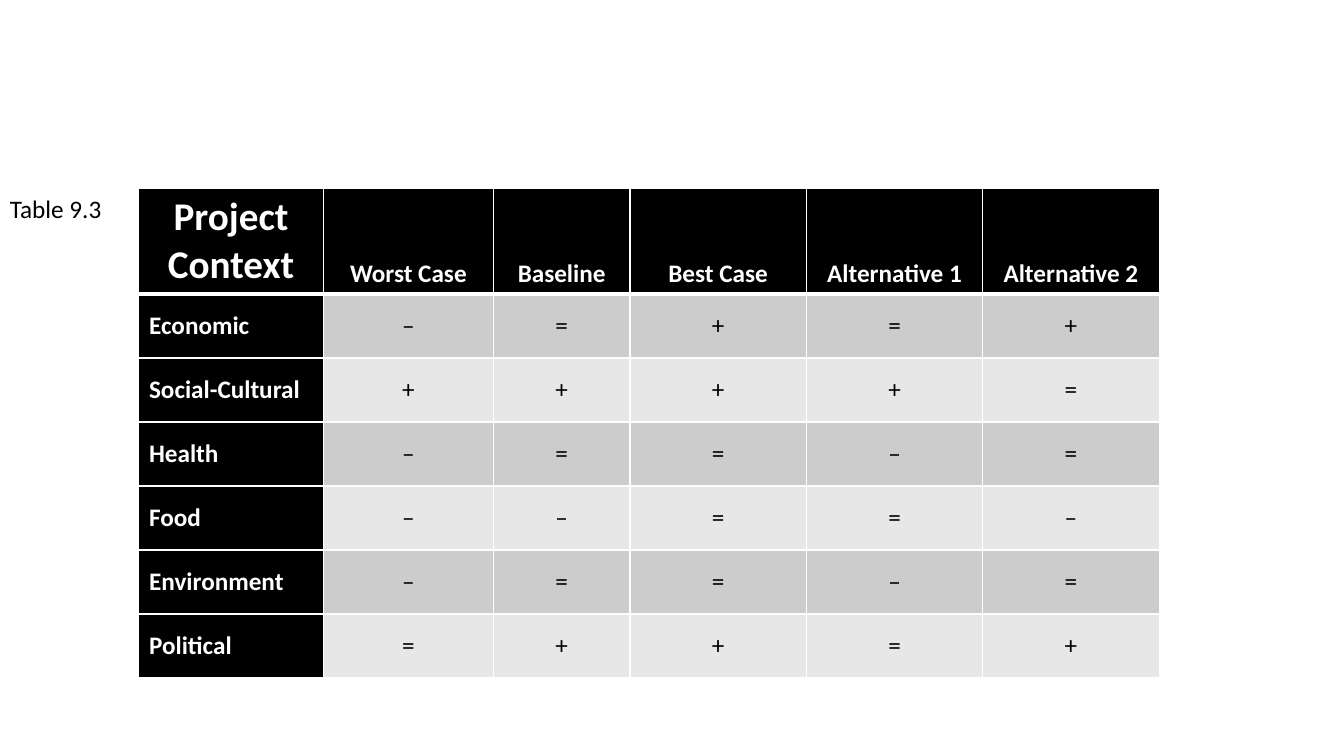
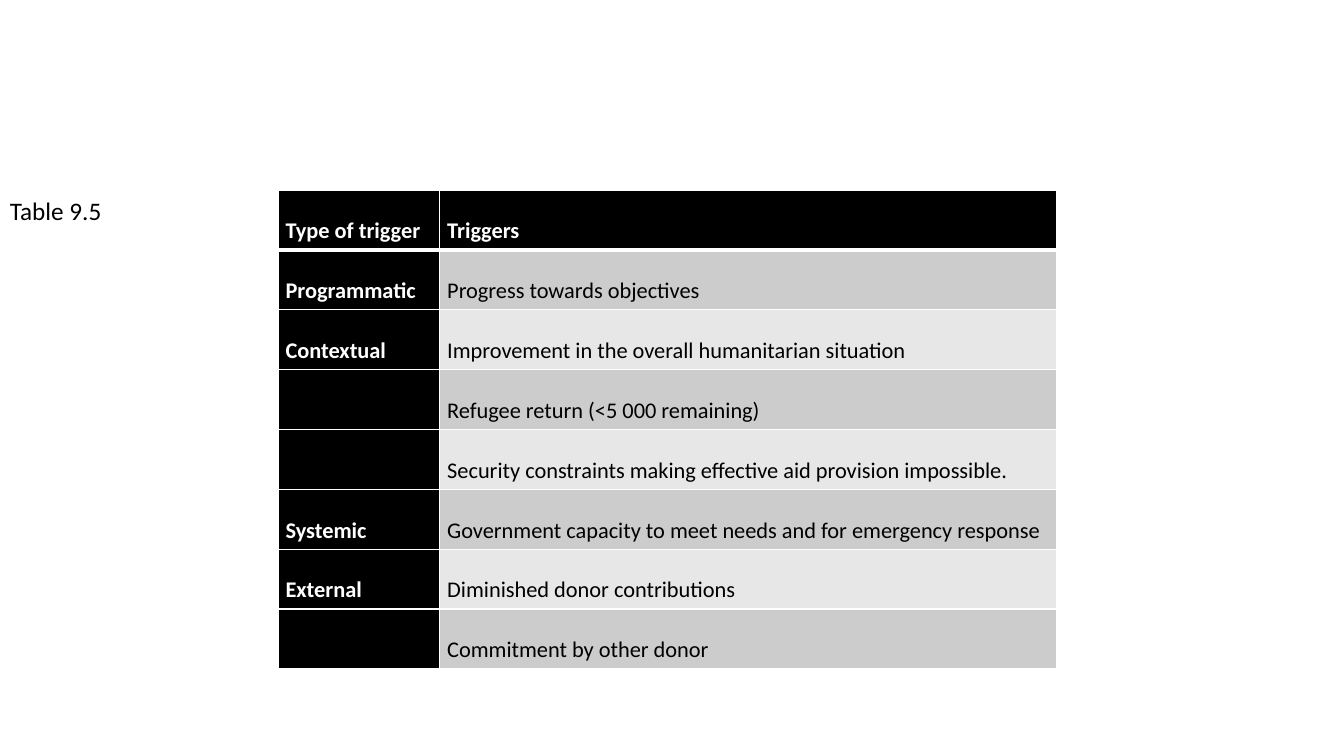
"""Build two slides, each with a caption and a banded table."""
from dataclasses import dataclass
from typing import Optional

from lxml import etree
from pptx import Presentation
from pptx import util as u
from pptx.dml.color import RGBColor
from pptx.enum import text
from pptx.oxml import ns

FONT = "Calibri"
COLORS = {"head": "000000", "odd": "CCCCCC", "even": "E7E7E7",
          "light": "FFFFFF", "dark": "000000"}
TOP, MIDDLE, BOTTOM = (text.MSO_ANCHOR.TOP, text.MSO_ANCHOR.MIDDLE,
                       text.MSO_ANCHOR.BOTTOM)
LEFT, CENTER, JUSTIFY = (text.PP_ALIGN.LEFT, text.PP_ALIGN.CENTER,
                         text.PP_ALIGN.JUSTIFY)


@dataclass(frozen=True)
class Style:
    """Text layout of a table cell."""
    size: int = 18
    align: text.PP_ALIGN = CENTER
    anchor: text.MSO_ANCHOR = MIDDLE
    spacing: Optional[float] = None
    margins: tuple[int, int] = (10, 5)


@dataclass(frozen=True)
class TableSlide:
    """Caption, table geometry, cell styles and rows of one slide."""
    caption: str
    left: int
    top: int
    widths: list[int]
    head_height: int
    row_height: int
    corner: Style
    head: Style
    label: Style
    value: Style
    rows: list[list[str]]

    def style(self, row: int, col: int) -> Style:
        """Return the style of the cell at a row and column."""
        if row == 0:
            return self.head if col else self.corner
        return self.value if col else self.label


TRIGGER = Style(16, JUSTIFY, TOP, 2.0, (7, 0))
SLIDES = [
    TableSlide(
        "Table 9.3", 132, 179, [176, 162, 130, 168, 168, 168], 101, 61,
        Style(28, anchor=TOP), Style(anchor=BOTTOM), Style(align=LEFT), Style(),
        [["Project Context", "Worst Case", "Baseline", "Best Case",
          "Alternative 1", "Alternative 2"],
         ["Economic", "–", "=", "+", "=", "+"],
         ["Social-Cultural", "+", "+", "+", "+", "="],
         ["Health", "–", "=", "=", "–", "="],
         ["Food", "–", "–", "=", "=", "–"],
         ["Environment", "–", "=", "=", "–", "="],
         ["Political", "=", "+", "+", "=", "+"]]),
    TableSlide(
        "Table 9.5", 265, 181, [154, 587], 57, 57,
        TRIGGER, TRIGGER, TRIGGER, TRIGGER,
        [["Type of trigger", "Triggers"],
         ["Programmatic", "Progress towards objectives"],
         ["Contextual", "Improvement in the overall humanitarian situation"],
         ["", "Refugee return (<5 000 remaining)"],
         ["", "Security constraints making effective aid provision impossible."],
         ["Systemic",
          "Government capacity to meet needs and for emergency response"],
         ["External", "Diminished donor contributions"],
         ["", "Commitment by other donor"]]),
]


def px(n: int) -> u.Emu:
    """Convert pixels, 96 to the inch, to EMU."""
    return u.Emu(n * 9525)


def rgb(name: str) -> RGBColor:
    """Return a named colour."""
    return RGBColor.from_string(COLORS[name])


def format_text(p, size: int, color: str, bold: bool = False) -> None:
    """Set the font of a paragraph."""
    p.font.name, p.font.size, p.font.bold = FONT, u.Pt(size), bold
    p.font.color.rgb = rgb(color)


def add_borders(cell, row: int) -> None:
    """Draw the cell's borders, heavy between header and body."""
    heavy = {0: "B", 1: "T"}.get(row)
    tc_pr = cell._tc.get_or_add_tcPr()
    for side in "LRTB":
        ln = etree.SubElement(tc_pr, ns.qn(f"a:ln{side}"),
                              w=str(u.Pt(3 if side == heavy else 1)))
        fill = etree.SubElement(ln, ns.qn("a:solidFill"))
        etree.SubElement(fill, ns.qn("a:srgbClr"), val=COLORS["light"])


def fill_cell(cell, value: str, style: Style, row: int, col: int) -> None:
    """Write and format one table cell."""
    is_head = row == 0 or col == 0
    add_borders(cell, row)
    cell.fill.solid()
    cell.fill.fore_color.rgb = rgb(
        "head" if is_head else "odd" if row % 2 else "even")
    cell.vertical_anchor = style.anchor
    cell.margin_left = cell.margin_right = px(style.margins[0])
    cell.margin_top = cell.margin_bottom = px(style.margins[1])
    p = cell.text_frame.paragraphs[0]
    p.text, p.alignment = value, style.align
    if style.spacing:
        p.line_spacing = style.spacing
    format_text(p, style.size, "light" if is_head else "dark", is_head)


def add_caption(s, value: str, top: int) -> None:
    """Add the table's caption at the slide's left edge."""
    tf = s.shapes.add_textbox(0, px(top), px(108), px(38)).text_frame
    tf.word_wrap, tf.auto_size = False, text.MSO_AUTO_SIZE.SHAPE_TO_FIT_TEXT
    p = tf.paragraphs[0]
    p.text = value
    format_text(p, 18, "dark")


def add_table(s, item: TableSlide) -> None:
    """Add the slide's table."""
    heights = [item.head_height] + [item.row_height] * (len(item.rows) - 1)
    table = s.shapes.add_table(
        len(heights), len(item.widths), px(item.left), px(item.top),
        px(sum(item.widths)), px(sum(heights))).table
    table.first_col = True
    for column, width in zip(table.columns, item.widths):
        column.width = px(width)
    for row, (height, values) in enumerate(zip(heights, item.rows)):
        table.rows[row].height = px(height)
        for col, value in enumerate(values):
            fill_cell(table.cell(row, col), value, item.style(row, col), row, col)


def main() -> None:
    """Build and save the presentation."""
    prs = Presentation()
    prs.slide_width, prs.slide_height = px(1280), px(720)
    for item in SLIDES:
        s = prs.slides.add_slide(prs.slide_layouts[6])
        add_caption(s, item.caption, item.top)
        add_table(s, item)
    prs.save("out.pptx")


if __name__ == "__main__":
    main()
